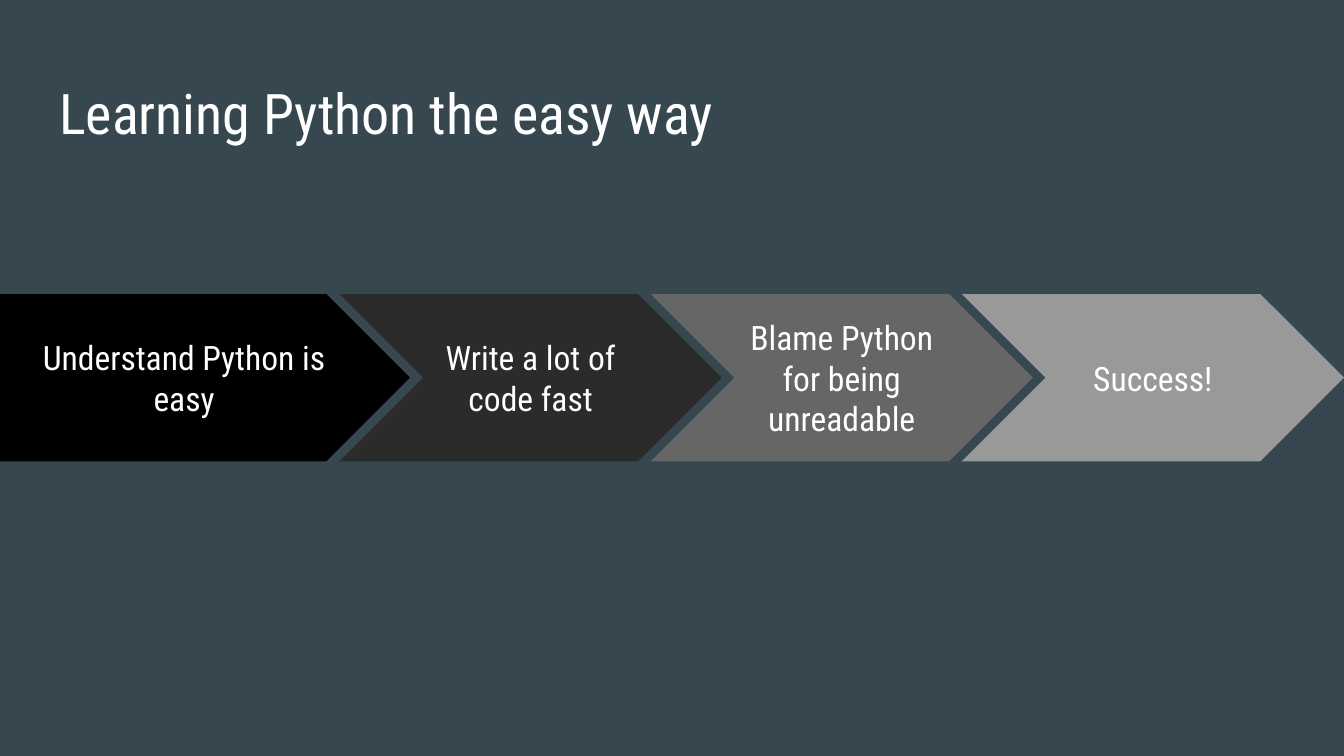
from dataclasses import dataclass

import pptx
import pptx.dml.color
import pptx.enum.shapes
import pptx.enum.text
import pptx.slide
import pptx.text.text
import pptx.util

Cm = pptx.util.Cm
RGBColor = pptx.dml.color.RGBColor
Shape = pptx.enum.shapes.MSO_SHAPE
Align = pptx.enum.text.PP_ALIGN
Anchor = pptx.enum.text.MSO_ANCHOR

SLATE = RGBColor(0x37, 0x47, 0x4F)
WHITE = RGBColor(0xFF, 0xFF, 0xFF)
BLACK = RGBColor(0x00, 0x00, 0x00)
CHARCOAL = RGBColor(0x2B, 0x2B, 0x2B)
DARK_GREY = RGBColor(0x66, 0x66, 0x66)
LIGHT_GREY = RGBColor(0x99, 0x99, 0x99)

FONT = "Roboto Condensed"
TEXT_INSET = 0.25

# Lengths in centimetres
SLIDE_WIDTH, SLIDE_HEIGHT = 25.4, 14.29
BAND_TOP, BAND_HEIGHT = 5.56, 3.16
START_WIDTH = 7.75
CHEVRON_LEFT, CHEVRON_WIDTH, CHEVRON_PITCH = 6.42, 7.22, 5.88


@dataclass(frozen=True)
class Step:
    label: str
    fill: RGBColor


STEPS = [
    Step("Understand Python is easy", BLACK),
    Step("Write a lot of code fast", CHARCOAL),
    Step("Blame Python for being unreadable", DARK_GREY),
    Step("Success!", LIGHT_GREY),
]


def write_text(frame: pptx.text.text.TextFrame, text: str, size: int,
               align: Align, anchor: Anchor) -> None:
    frame.word_wrap = True
    frame.auto_size = pptx.enum.text.MSO_AUTO_SIZE.NONE
    frame.vertical_anchor = anchor
    frame.margin_left = frame.margin_right = Cm(TEXT_INSET)
    frame.margin_top = frame.margin_bottom = Cm(TEXT_INSET)
    paragraph = frame.paragraphs[0]
    paragraph.alignment = align
    run = paragraph.add_run()
    run.text = text
    run.font.name = FONT
    run.font.size = pptx.util.Pt(size)
    run.font.color.rgb = WHITE


def add_title(slide: pptx.slide.Slide, text: str) -> None:
    title = slide.shapes.title
    title.left, title.top = Cm(0.87), Cm(1.24)
    title.width, title.height = Cm(23.67), Cm(1.6)
    write_text(title.text_frame, text, 30, Align.LEFT, Anchor.TOP)


def add_step(slide: pptx.slide.Slide, index: int, step: Step) -> None:
    """Draw one arrow of the band; the first has a flat left edge."""
    if index == 0:
        kind, left, width = Shape.PENTAGON, 0, START_WIDTH
    else:
        kind, width = Shape.CHEVRON, CHEVRON_WIDTH
        left = CHEVRON_LEFT + (index - 1) * CHEVRON_PITCH
    arrow = slide.shapes.add_shape(
        kind, Cm(left), Cm(BAND_TOP), Cm(width), Cm(BAND_HEIGHT))
    arrow.adjustments[0] = 0.5
    arrow.shadow.inherit = False
    arrow.fill.solid()
    arrow.fill.fore_color.rgb = step.fill
    arrow.line.fill.background()
    write_text(arrow.text_frame, step.label, 18, Align.CENTER, Anchor.MIDDLE)


def main() -> None:
    deck = pptx.Presentation()
    deck.slide_width, deck.slide_height = Cm(SLIDE_WIDTH), Cm(SLIDE_HEIGHT)
    slide = deck.slides.add_slide(deck.slide_layouts.get_by_name("Title Only"))
    slide.background.fill.solid()
    slide.background.fill.fore_color.rgb = SLATE

    add_title(slide, "Learning Python the easy way")
    for index, step in enumerate(STEPS):
        add_step(slide, index, step)

    deck.save("out.pptx")


if __name__ == "__main__":
    main()
